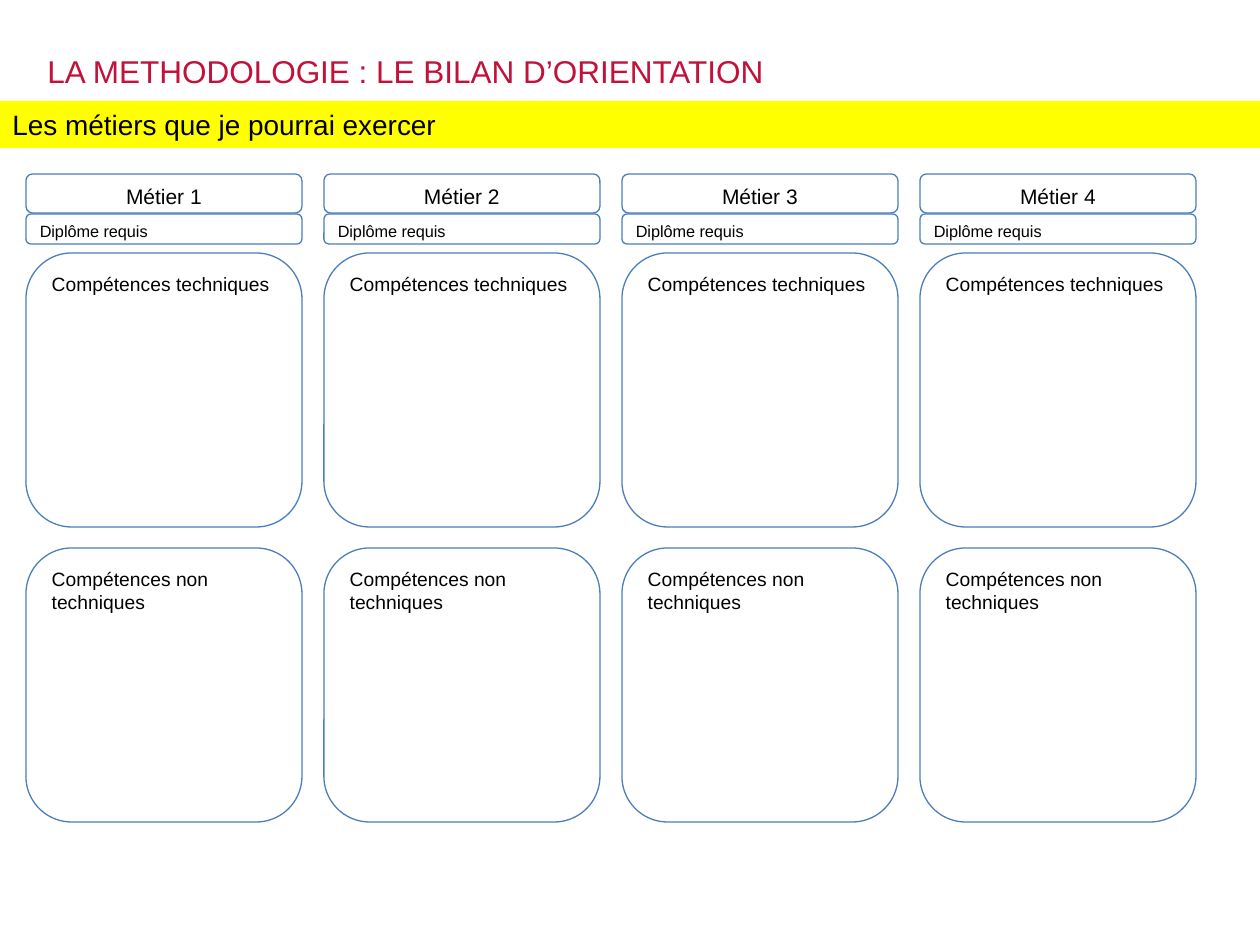
from pptx import Presentation
from pptx.dml.color import RGBColor
from pptx.enum.shapes import MSO_SHAPE
from pptx.enum.text import MSO_ANCHOR, PP_ALIGN
from pptx.util import Emu, Pt

PX_PER_INCH = 126
RED = RGBColor(0xC2, 0x11, 0x3A)
YELLOW = RGBColor(0xFF, 0xFF, 0x00)
BLUE = RGBColor(0x4B, 0x7E, 0xBC)
BLACK = RGBColor(0x00, 0x00, 0x00)

LEFT, PITCH, WIDTH = 26, 298, 276
JOBS = 4


def px(n):
    return Emu(round(n * 914400 / PX_PER_INCH))


def write(sp, text, size, color=BLACK, align=PP_ALIGN.LEFT,
          anchor=MSO_ANCHOR.TOP, top=6):
    tf = sp.text_frame
    tf.word_wrap = True
    tf.vertical_anchor = anchor
    tf.margin_top = px(top)
    p = tf.paragraphs[0]
    p.alignment = align
    r = p.add_run()
    r.text = text
    r.font.name = "Arial"
    r.font.size = Pt(size)
    r.font.color.rgb = color


def add_title(s, text):
    sp = s.shapes.add_textbox(px(35), px(43), px(1012), px(89))
    write(sp, text, 18, RED, top=9)


def add_band(s, text):
    sp = s.shapes.add_shape(MSO_SHAPE.RECTANGLE, px(0), px(101), px(1260), px(47))
    sp.shadow.inherit = False
    sp.fill.solid()
    sp.fill.fore_color.rgb = YELLOW
    sp.line.fill.background()
    write(sp, text, 16, anchor=MSO_ANCHOR.MIDDLE)


def add_box(s, x, y, h, text, size, **style):
    sp = s.shapes.add_shape(MSO_SHAPE.ROUNDED_RECTANGLE, px(x), px(y), px(WIDTH), px(h))
    sp.shadow.inherit = False
    sp.fill.background()
    sp.line.color.rgb = BLUE
    sp.line.width = Pt(0.75)
    write(sp, text, size, **style)


def add_job(s, number):
    x = LEFT + PITCH * (number - 1)
    add_box(s, x, 253, 274, "Compétences techniques", 11)
    add_box(s, x, 174, 39, f"Métier {number}", 12, align=PP_ALIGN.CENTER, top=8)
    add_box(s, x, 214, 30, "Diplôme requis", 9.3)
    add_box(s, x, 548, 274, "Compétences non techniques", 11)


def main():
    prs = Presentation()
    prs.slide_width, prs.slide_height = px(1260), px(945)
    s = prs.slides.add_slide(prs.slide_layouts[6])
    add_title(s, "LA METHODOLOGIE : LE BILAN D’ORIENTATION")
    add_band(s, "Les métiers que je pourrai exercer")
    for number in range(1, JOBS + 1):
        add_job(s, number)
    prs.save("out.pptx")


if __name__ == "__main__":
    main()
